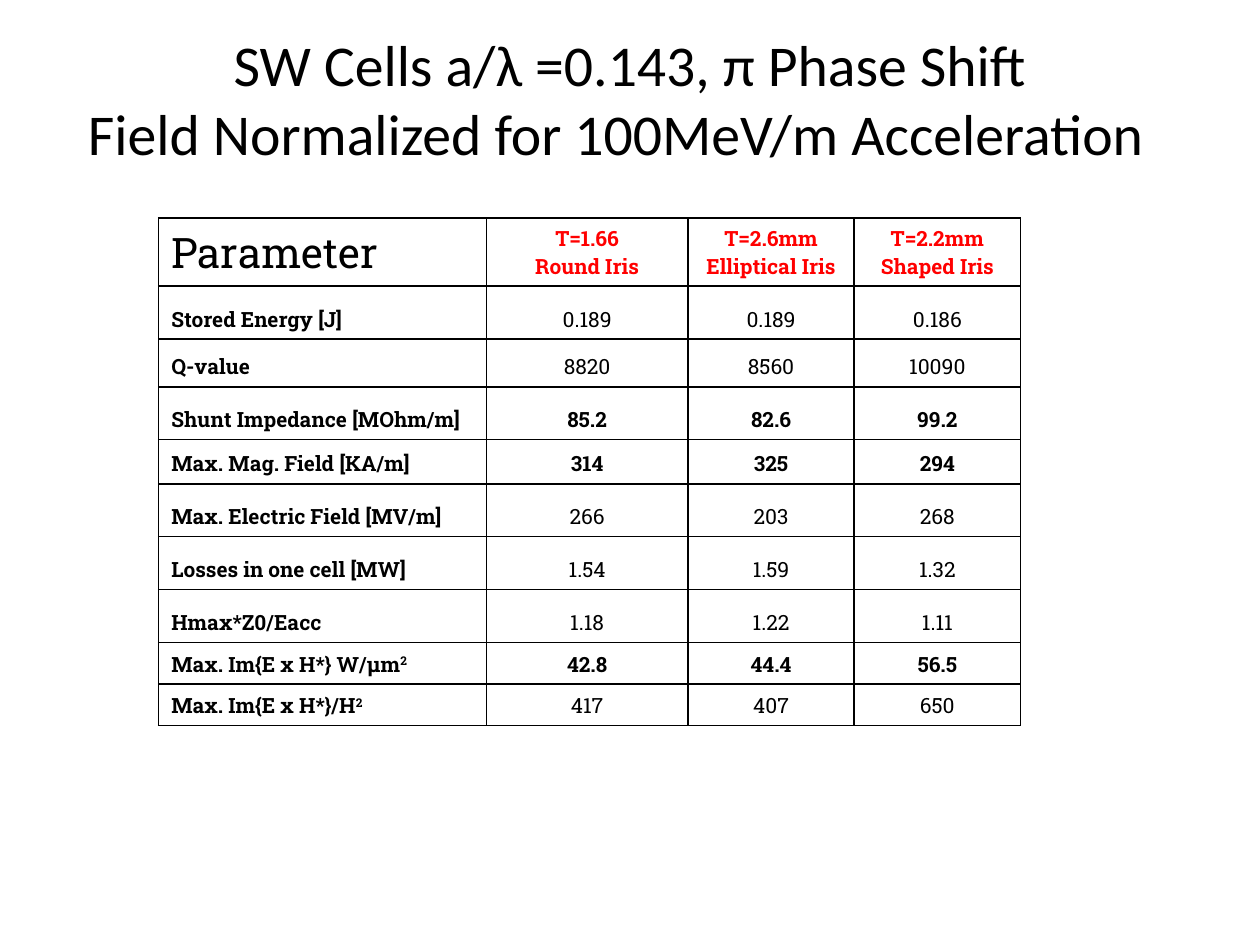
from typing import NamedTuple

from lxml.etree import SubElement
from pptx import Presentation
from pptx.dml.color import RGBColor
from pptx.enum.text import MSO_ANCHOR as Anchor, PP_ALIGN as Align
from pptx.oxml.ns import qn
from pptx.util import Inches, Pt

BLACK = RGBColor(0x00, 0x00, 0x00)
RED = RGBColor(0xFF, 0x00, 0x00)

TITLE = {"name": "Calibri", "size": Pt(33), "color": BLACK}
CORNER = {"name": "Roboto Slab", "size": Pt(24), "color": BLACK}
BODY = {"name": "Roboto Slab", "size": Pt(12), "color": BLACK, "bold": False}
LABEL = {**BODY, "bold": True}
HEADING = {**LABEL, "color": RED}


class Row(NamedTuple):
    label: str
    values: tuple[str, ...]
    height: float
    bold: bool = False
    power: str = ""


COLUMN_WIDTHS = (2.6, 1.6, 1.32, 1.32)
HEADER_HEIGHT = 0.46
HEADINGS = (
    ("T=1.66", "Round Iris"),
    ("T=2.6mm", "Elliptical Iris"),
    ("T=2.2mm", "Shaped Iris"),
)
ROWS = (
    Row("Stored Energy [J]", ("0.189", "0.189", "0.186"), 0.42),
    Row("Q-value", ("8820", "8560", "10090"), 0.38),
    Row("Shunt Impedance [MOhm/m]", ("85.2", "82.6", "99.2"), 0.42, bold=True),
    Row("Max. Mag. Field [KA/m]", ("314", "325", "294"), 0.35, bold=True),
    Row("Max. Electric Field [MV/m]", ("266", "203", "268"), 0.42),
    Row("Losses in one cell [MW]", ("1.54", "1.59", "1.32"), 0.42),
    Row("Hmax*Z0/Eacc", ("1.18", "1.22", "1.11"), 0.42),
    Row("Max. Im{E x H*} W/µm", ("42.8", "44.4", "56.5"), 0.33, bold=True, power="2"),
    Row("Max. Im{E x H*}/H", ("417", "407", "650"), 0.33, power="2"),
)


def add_run(p, text: str, fmt: dict):
    r = p.add_run()
    r.text = text
    for key, value in fmt.items():
        if key == "color":
            r.font.color.rgb = value
        else:
            setattr(r.font, key, value)
    return r


def write_lines(tf, lines: tuple[str, ...], fmt: dict, align=Align.CENTER) -> None:
    for i, line in enumerate(lines):
        p = tf.paragraphs[0] if i == 0 else tf.add_paragraph()
        p.alignment = align
        add_run(p, line, fmt)


def outline_cell(cell) -> None:
    """Give a cell a thin black border and no fill."""
    tc_pr = cell._tc.get_or_add_tcPr()
    for side in ("lnL", "lnR", "lnT", "lnB"):
        ln = SubElement(tc_pr, qn(f"a:{side}"), w=str(Pt(1)))
        fill = SubElement(ln, qn("a:solidFill"))
        SubElement(fill, qn("a:srgbClr"), val=str(BLACK))
    cell.fill.background()
    cell.vertical_anchor = Anchor.BOTTOM


def add_title(s, lines: tuple[str, ...]) -> None:
    tf = s.shapes.add_textbox(Inches(0.5), Inches(0.18), Inches(9), Inches(1.06)).text_frame
    tf.word_wrap = True
    write_lines(tf, lines, TITLE)
    # The second line sits slightly left of centre
    tf.paragraphs[-1]._p.get_or_add_pPr().set("marR", str(Inches(0.22)))


def add_parameter_table(s) -> None:
    heights = (HEADER_HEIGHT, *(row.height for row in ROWS))
    table = s.shapes.add_table(
        len(heights), len(COLUMN_WIDTHS), Inches(1.26), Inches(1.73),
        Inches(sum(COLUMN_WIDTHS)), Inches(sum(heights)),
    ).table
    table.first_row = table.horz_banding = False
    for column, width in zip(table.columns, COLUMN_WIDTHS):
        column.width = Inches(width)
    for table_row, height in zip(table.rows, heights):
        table_row.height = Inches(height)
    for cell in table.iter_cells():
        outline_cell(cell)

    # Header row
    write_lines(table.cell(0, 0).text_frame, ("Parameter",), CORNER, Align.LEFT)
    for j, heading in enumerate(HEADINGS, 1):
        write_lines(table.cell(0, j).text_frame, heading, HEADING)

    # Parameter rows
    for i, row in enumerate(ROWS, 1):
        tf = table.cell(i, 0).text_frame
        write_lines(tf, (row.label,), LABEL, Align.LEFT)
        if row.power:
            r = add_run(tf.paragraphs[0], row.power, LABEL)
            r.font._element.set("baseline", "30000")
        for j, value in enumerate(row.values, 1):
            write_lines(table.cell(i, j).text_frame, (value,), LABEL if row.bold else BODY)


def main() -> None:
    prs = Presentation()
    prs.slide_width, prs.slide_height = Inches(10), Inches(7.5)
    s = prs.slides.add_slide(prs.slide_layouts[6])
    add_parameter_table(s)
    add_title(s, (
        "SW Cells a/λ =0.143, π Phase Shift",
        "Field Normalized for 100MeV/m Acceleration",
    ))
    prs.save("out.pptx")


if __name__ == "__main__":
    main()
